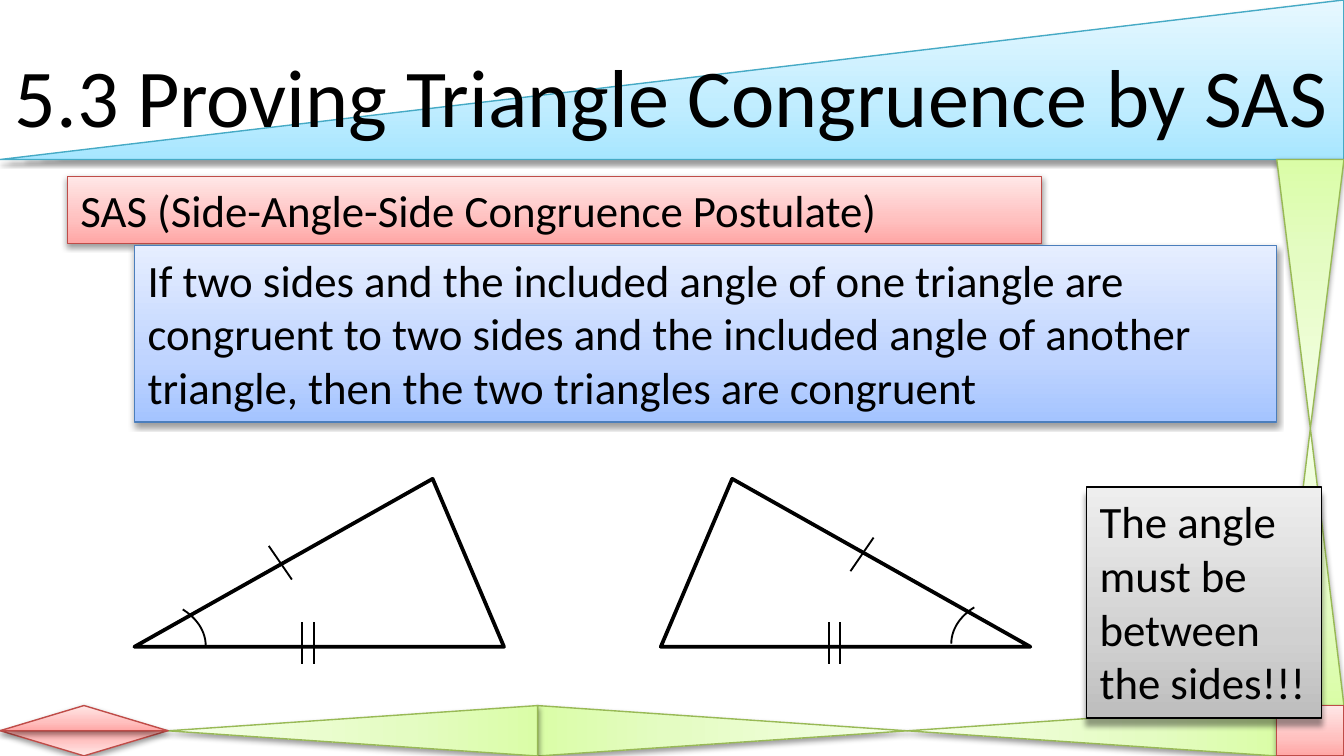
from lxml import etree
from pptx import Presentation, util as u
from pptx.dml.color import RGBColor
from pptx.enum import shapes, text
from pptx.oxml import parse_xml
from pptx.oxml.ns import nsdecls, qn

COLS, ROWS = 160, 90  # square cells of 1/16 inch
CELL = u.Inches(1 / 16)
FONT = "Calibri"
HEX = {"ink": "000000", "paper": "FFFFFF"}
GRADS = {  # bottom, middle, top, outline
    "aqua": ("A7E6FF", "C1EDFF", "E7F8FF", "46AAC5"),
    "lime": ("DAFDA7", "E4FCC2", "F5FFE7", "98B955"),
    "rose": ("FFA6A5", "FFC0BF", "FFE7E7", "BF4C48"),
    "blue": ("A4C4FF", "BFD4FF", "E6EEFF", "4B7EBC"),
    "gray": ("BDBDBD", "D1D1D1", "EEEEEE", "000000"),
}
KIND = shapes.MSO_SHAPE
TRI, RECT = KIND.ISOSCELES_TRIANGLE, KIND.RECTANGLE


def grid(*cells):
    return [u.Emu(int(c * CELL)) for c in cells]


def write(frame, words, size=24, color=HEX["ink"], align=text.PP_ALIGN.LEFT,
          anchor=text.MSO_ANCHOR.TOP):
    frame.word_wrap = True
    frame.vertical_anchor = anchor
    par = frame.paragraphs[0]
    par.alignment = align
    run = par.add_run()
    run.text = words
    run.font.name, run.font.size = FONT, u.Pt(size)
    run.font.color.rgb = RGBColor.from_string(color)


class Deck:
    """Holds the style and the current slide."""

    def __init__(self):
        self.file = Presentation()
        self.file.slide_width, self.file.slide_height = grid(COLS, ROWS)
        self.slide = self.file.slides.add_slide(self.file.slide_layouts[5])

    def title(self, words, *box):
        head = self.slide.shapes.title
        head.left, head.top, head.width, head.height = grid(*box)
        write(head.text_frame, words, size=44, align=text.PP_ALIGN.CENTER,
              anchor=text.MSO_ANCHOR.MIDDLE)
        self.slide.shapes._spTree.append(head._element)  # above the border

    def shape(self, kind, *box, flip="", turn=0, adj=None, fill=None, width=1):
        item = self.slide.shapes.add_shape(kind, *grid(*box))
        item.shadow.inherit = False
        item.rotation = turn
        if flip:
            item._element.spPr.find(qn("a:xfrm")).set("flip" + flip, "1")
        if adj is not None:
            item.adjustments[0] = adj
        if fill:
            item.fill.solid()
            item.fill.fore_color.rgb = RGBColor.from_string(fill)
        else:
            item.fill.background()
        self.pen(item, width)
        return item

    def pen(self, item, width, color=HEX["ink"]):
        item.line.width = u.Pt(width)
        item.line.color.rgb = RGBColor.from_string(color)

    def glow(self, kind, *box, tint, drop=1.6, **opts):
        """Add a shape with a vertical gradient and a soft shadow below."""
        item = self.shape(kind, *box, **opts)
        *stops, edge = GRADS[tint]
        self.pen(item, 0.75, edge)
        marks = "".join(f'<a:gs pos="{pos}000"><a:srgbClr val="{c}"/></a:gs>'
                        for pos, c in zip((0, 35, 100), stops))
        props = item._element.spPr
        props.replace(props.find(qn("a:noFill")), parse_xml(
            f'<a:gradFill {nsdecls("a")} rotWithShape="1"><a:gsLst>{marks}'
            '</a:gsLst><a:lin ang="16200000" scaled="0"/></a:gradFill>'))
        props.find(qn("a:effectLst")).append(parse_xml(
            f'<a:outerShdw {nsdecls("a")} blurRad="{u.Pt(3.1)}" '
            f'dist="{u.Pt(drop)}" dir="5400000" rotWithShape="0">'
            f'<a:srgbClr val="{HEX["ink"]}"><a:alpha val="38000"/></a:srgbClr>'
            '</a:outerShdw>'))
        return item

    def note(self, words, *box, **opts):
        write(self.glow(RECT, *box, **opts).text_frame, words)

    def tick(self, *ends):
        line = self.slide.shapes.add_connector(
            shapes.MSO_CONNECTOR.STRAIGHT, *grid(*ends))
        self.pen(line, 1)
        etree.SubElement(line._element.spPr, qn("a:effectLst"))

    def border(self):
        self.glow(KIND.RIGHT_TRIANGLE, 0, 0, COLS, 19, tint="aqua", flip="H")
        self.glow(TRI, 152, 19, 8, 32, tint="lime", flip="V")
        self.glow(TRI, 152, 51, 8, 33, tint="lime")
        for left, turn, flip in ((127, 270, ""), (83, 90, "H"), (39, 270, "")):
            self.glow(TRI, left, 65, 6, 44, tint="lime", turn=turn, flip=flip)
        self.glow(RECT, 152, 84, 8, 6, tint="rose")
        self.glow(TRI, 0, 87, 20, 3, tint="rose", flip="V")
        self.glow(TRI, 0, 84, 20, 3, tint="rose")

    def figure(self, left, arc, slant, pair, flip=""):
        """Draw a triangle with its equal sides and angle marked."""
        self.shape(TRI, left, 57, 44, 20, flip=flip, adj=0.807,
                   fill=HEX["paper"], width=2)
        self.tick(*slant)
        for col in pair:
            self.tick(col, 79, col, 74)
        self.shape(KIND.ARC, *arc, 15.25, 11.3, flip=flip, adj=191.069)


def main():
    deck = Deck()
    deck.border()
    deck.title("5.3 Proving Triangle Congruence by SAS", 0, 3.75, COLS, 15)
    deck.note("SAS (Side-Angle-Side Congruence Postulate)",
              8, 21, 116, 8, tint="rose")
    deck.note("If two sides and the included angle of one triangle are "
              "congruent to two sides and the included angle of another "
              "triangle, then the two triangles are congruent",
              16, 29.25, 136, 21, tint="blue")
    deck.figure(16, (9.25, 71.25), (32, 65, 34.75, 69), (36, 37.35))
    deck.figure(78.67, (113.25, 71), (104, 64, 101.25, 68), (98.65, 100),
                flip="H")
    deck.note("The angle must be between the sides!!!",
              129.33, 58, 28, 27.5, tint="gray", drop=4)
    deck.file.save("out.pptx")


if __name__ == "__main__":
    main()
